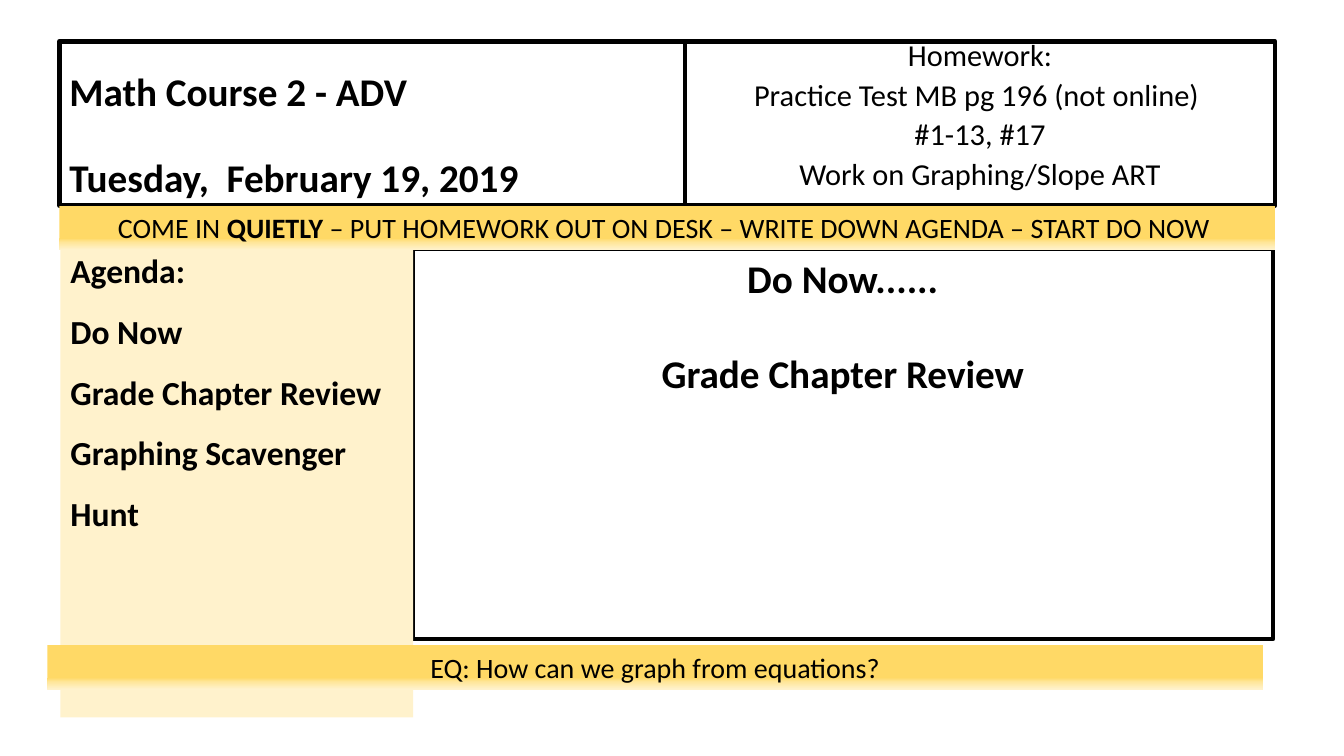
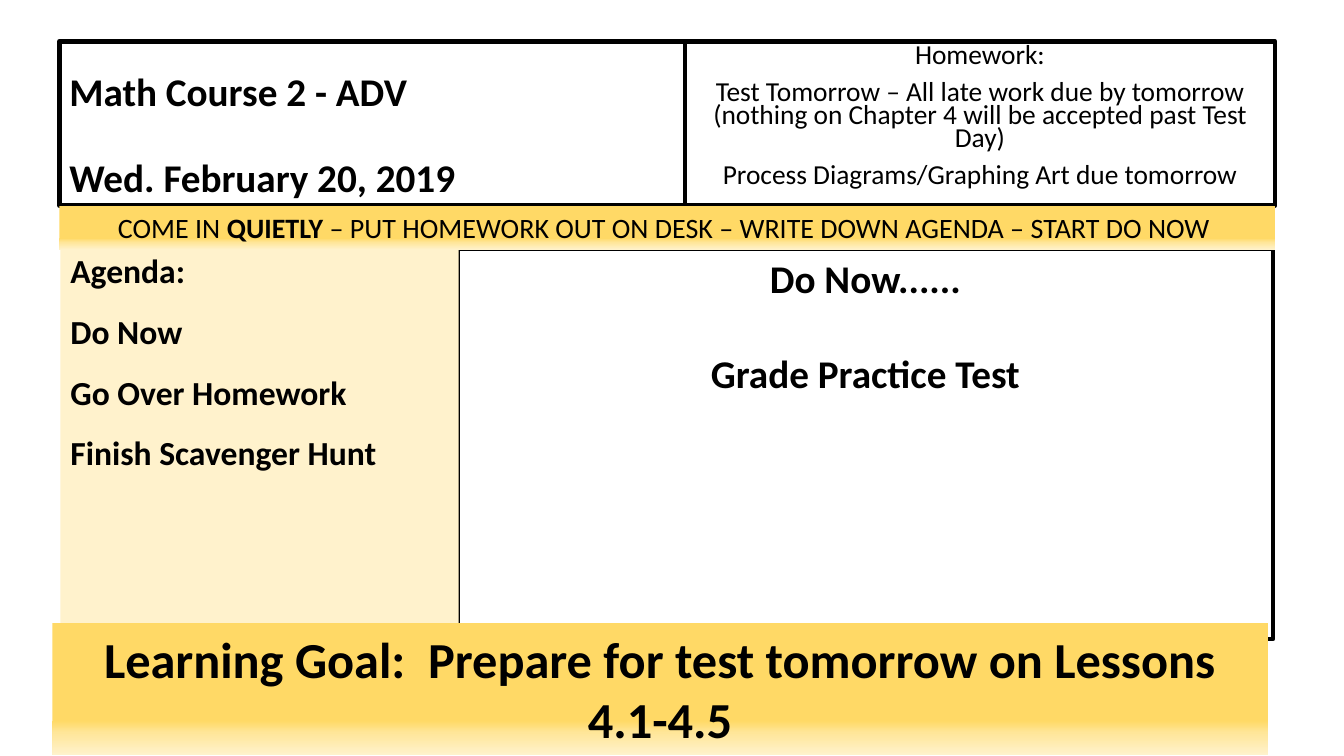
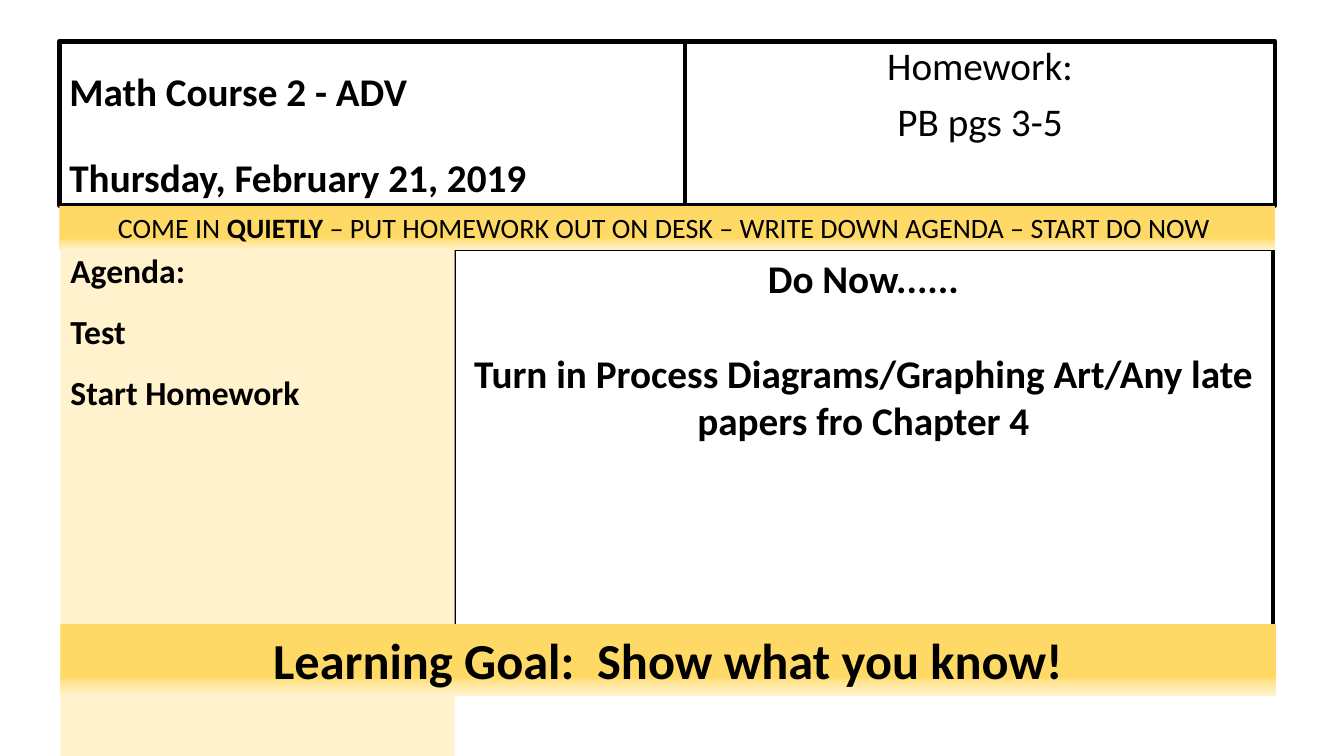
from lxml import etree
from pptx import Presentation
from pptx.dml.color import RGBColor
from pptx.enum import shapes, text
from pptx.oxml import ns
from pptx.util import Pt

FONT = "Calibri"
BLACK = "000000"
CREAM = "FFF2CC"
GOLD_STOPS = [(0, "FFD966"), (74, "FFD966"), (83, "FFE699"), (100, CREAM)]
BORDER = 3.25

# Shared frame, in points
SLIDE_WIDTH, SLIDE_HEIGHT = 960, 540
LEFT, TOP = 42.5, 29.5
BAND_WIDTH = 868.3
COURSE_WIDTH, HOMEWORK_WIDTH, HEADER_HEIGHT = 446.8, 421.5, 117.4
BANNER_HEIGHT = 31.6
BODY_TOP = TOP + HEADER_HEIGHT + BANNER_HEIGHT
DO_NOW_RIGHT = 909.4

REMINDER = [
    ("COME IN ", False),
    ("QUIETLY", True),
    (" – PUT HOMEWORK OUT ON DESK – WRITE DOWN AGENDA – START DO NOW ", False),
]

DAYS = [
    {
        "date": "Tuesday,  February 19, 2019",
        "homework": ["Homework:", "Practice Test MB pg 196 (not online) ", "#1-13, #17",
                     "Work on Graphing/Slope ART"],
        "homework_format": {"size": 21.7, "line_spacing": 0.7},
        "do_now": "Grade Chapter Review", "do_now_height": 278.6,
        "agenda": ["Do Now", "Grade Chapter Review", "Graphing Scavenger Hunt"],
        "agenda_size": (252, 334),
        "goal": "EQ: How can we graph from equations?",
        "goal_box": (33.8, 460.8, BAND_WIDTH, BANNER_HEIGHT),
        "goal_format": {"size": 20},
    },
    {
        "date": "Wed. February 20, 2019",
        "homework": ["Homework:",
                     "Test Tomorrow – All late work due by tomorrow "
                     "(nothing on Chapter 4 will be accepted past Test Day)",
                     "Process Diagrams/Graphing Art due tomorrow"],
        "homework_format": {"size": 19.6, "line_spacing": 0.7},
        "do_now": "Grade Practice Test", "do_now_height": 278.6,
        "agenda": ["Do Now", "Go Over Homework", "Finish Scavenger Hunt"],
        "agenda_size": (284.4, 290.9),
        "goal": "Learning Goal:  Prepare for test tomorrow on Lessons 4.1-4.5",
        "goal_box": (37.4, 445, BAND_WIDTH, 94.5),
        "goal_format": {"size": 36, "bold": True},
    },
    {
        "date": "Thursday, February 21, 2019",
        "homework": ["Homework:", "PB pgs 3-5"],
        "homework_format": {"size": 28, "line_spacing": 0.9},
        "do_now": "Turn in Process Diagrams/Graphing Art/Any late papers fro Chapter 4",
        "do_now_height": 312.5,
        "agenda": ["Test", "Start Homework"],
        "agenda_size": (281.5, SLIDE_HEIGHT - BODY_TOP),
        "goal": "Learning Goal:  Show what you know!",
        "goal_box": (43.2, 445.7, BAND_WIDTH, 51.1),
        "goal_format": {"size": 36, "bold": True},
    },
]


def color(value):
    return RGBColor.from_string(value)


def add_box(slide, box, fill=None, line=None):
    """Add a plain rectangle whose text starts at the top left."""
    shape = slide.shapes.add_shape(shapes.MSO_SHAPE.RECTANGLE, *map(Pt, box))
    shape.shadow.inherit = False
    if fill:
        shape.fill.solid()
        shape.fill.fore_color.rgb = color(fill)
    else:
        shape.fill.background()
    if line:
        shape.line.color.rgb = color(line)
        shape.line.width = Pt(BORDER)
    else:
        shape.line.fill.background()
    shape.text_frame.word_wrap = True
    shape.text_frame.vertical_anchor = text.MSO_ANCHOR.TOP
    return shape


def fill_gold(shape):
    """Fill a shape with the gold fade, top to bottom."""
    shape.fill.gradient()
    shape.fill.gradient_angle = 270
    stop_list = shape._element.spPr.find(".//" + ns.qn("a:gsLst"))
    for stop in list(stop_list):
        stop_list.remove(stop)
    for position, value in GOLD_STOPS:
        stop = etree.SubElement(stop_list, ns.qn("a:gs"), pos=str(position * 1000))
        etree.SubElement(stop, ns.qn("a:srgbClr"), val=value)


def write(shape, content, size, bold=False, align="LEFT", line_spacing=1.0, space_before=0):
    """Append one paragraph; content is a string or a list of (string, bold) runs."""
    frame = shape.text_frame
    first = frame.paragraphs[0]
    paragraph = frame.add_paragraph() if first.runs else first
    paragraph.alignment = getattr(text.PP_ALIGN, align)
    paragraph.line_spacing = line_spacing
    paragraph.space_before = Pt(space_before)
    runs = [(content, bold)] if isinstance(content, str) else content
    for words, is_bold in runs:
        run = paragraph.add_run()
        run.text = words
        run.font.name = FONT
        run.font.size = Pt(size)
        run.font.bold = is_bold
        run.font.color.rgb = color(BLACK)


def add_course(slide, box, date):
    shape = add_box(slide, box, line=BLACK)
    shape.text_frame.vertical_anchor = text.MSO_ANCHOR.BOTTOM
    write(shape, "Math Course 2 - ADV", 28, bold=True, line_spacing=0.9)
    write(shape, date, 28, bold=True, line_spacing=0.9, space_before=30.8)


def add_homework(slide, box, lines, line_format):
    shape = add_box(slide, box, line=BLACK)
    for line in lines:
        write(shape, line, align="CENTER", space_before=10, **line_format)


def add_do_now(slide, box, task):
    shape = add_box(slide, box, line=BLACK)
    write(shape, "Do Now......", 28, bold=True, align="CENTER")
    write(shape, task, 28, bold=True, align="CENTER", space_before=34.2)


def add_band(slide, box, content, **text_format):
    shape = add_box(slide, box)
    fill_gold(shape)
    write(shape, content, align="CENTER", **text_format)


def add_agenda(slide, box, items):
    shape = add_box(slide, box, fill=CREAM)
    write(shape, "Agenda:", 24, bold=True, line_spacing=0.9)
    for item in items:
        write(shape, item, 24, bold=True, line_spacing=1.5)


def add_day(presentation, day):
    slide = presentation.slides.add_slide(presentation.slide_layouts[6])
    # Header
    add_course(slide, (LEFT, TOP, COURSE_WIDTH, HEADER_HEIGHT), day["date"])
    add_homework(slide, (LEFT + COURSE_WIDTH, TOP, HOMEWORK_WIDTH, HEADER_HEIGHT),
                 day["homework"], day["homework_format"])
    # Body: the task box meets the right edge of the agenda
    agenda_width, agenda_height = day["agenda_size"]
    do_now_left = LEFT + agenda_width
    add_do_now(slide, (do_now_left, BODY_TOP - 0.7, DO_NOW_RIGHT - do_now_left,
                       day["do_now_height"]), day["do_now"])
    add_band(slide, (LEFT, TOP + HEADER_HEIGHT, BAND_WIDTH, BANNER_HEIGHT), REMINDER, size=20)
    add_agenda(slide, (LEFT + 0.7, BODY_TOP, agenda_width, agenda_height), day["agenda"])
    # Footer
    add_band(slide, day["goal_box"], day["goal"], **day["goal_format"])


def main():
    presentation = Presentation()
    presentation.slide_width = Pt(SLIDE_WIDTH)
    presentation.slide_height = Pt(SLIDE_HEIGHT)
    for day in DAYS:
        add_day(presentation, day)
    presentation.save("out.pptx")


if __name__ == "__main__":
    main()
